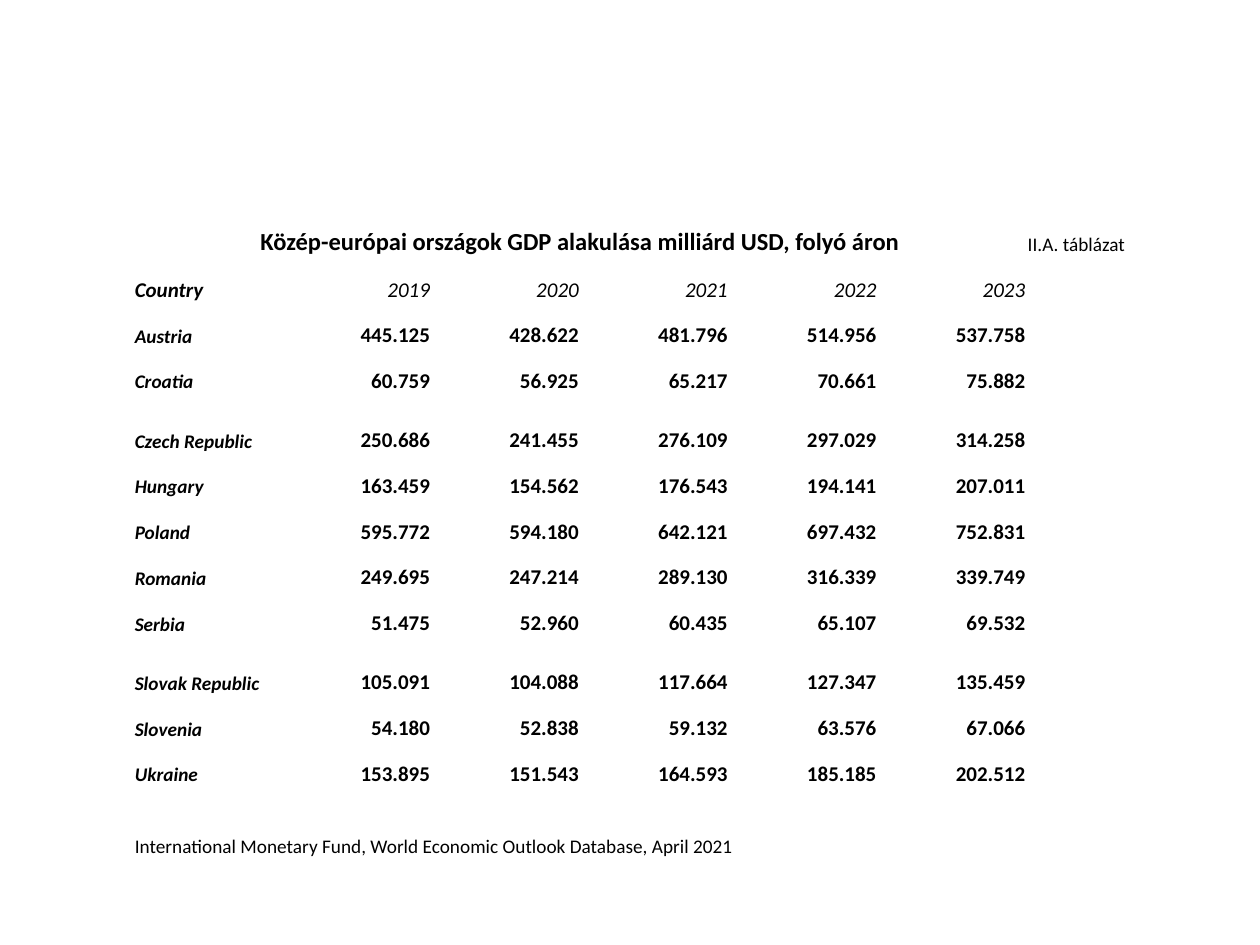
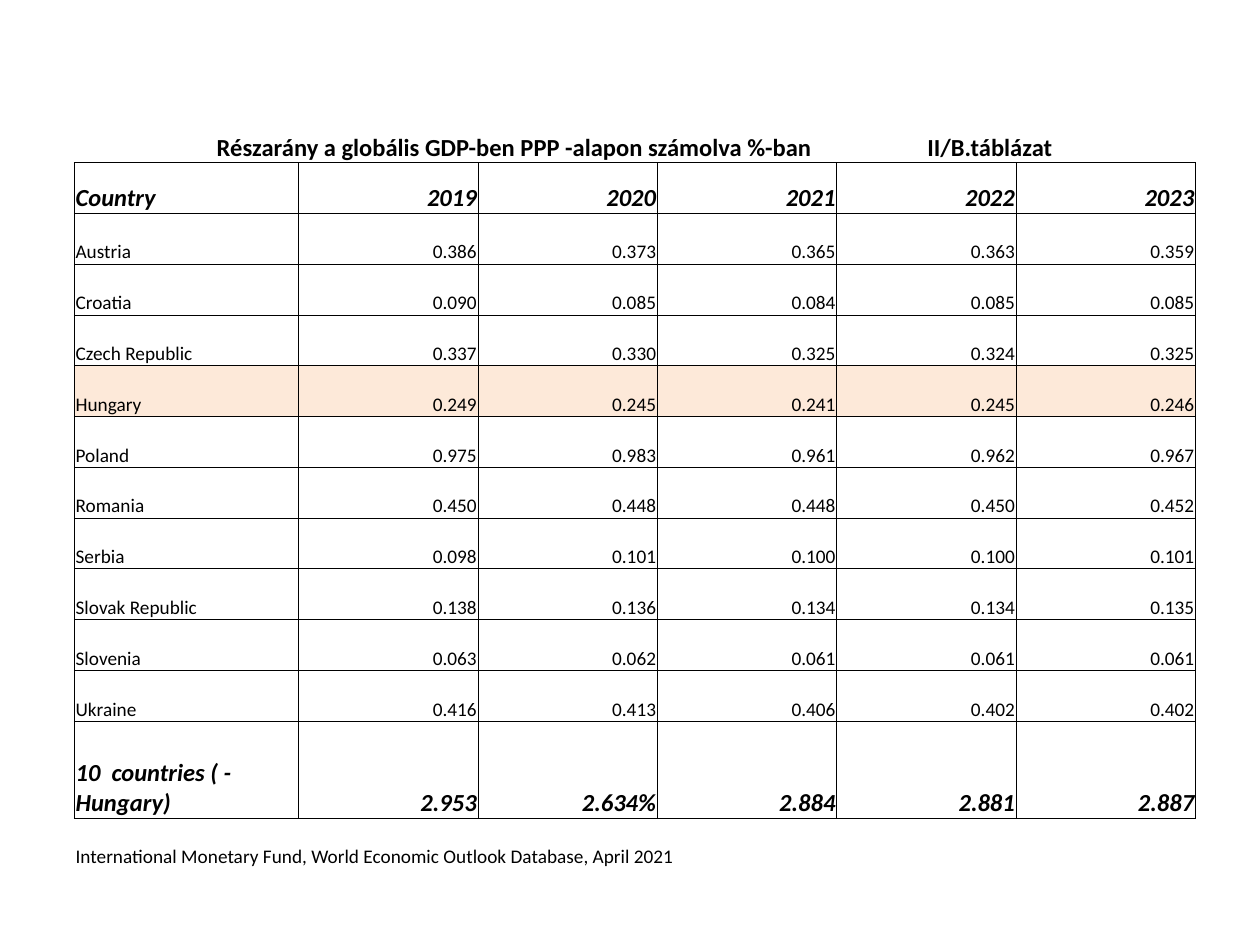
from dataclasses import dataclass

import lxml.etree
import pptx
import pptx.dml.color
import pptx.enum.text
import pptx.oxml.ns
import pptx.slide
import pptx.table
import pptx.util

Inches = pptx.util.Inches
Pt = pptx.util.Pt
qn = pptx.oxml.ns.qn
ALIGN = pptx.enum.text.PP_ALIGN

# Shared look
COLORS = {"text": "000000", "border": "000000", "highlight": "FDE9D9"}
FONT = "Calibri"
PLAIN_STYLE = "{2D5ABB26-0587-4C30-8999-92F81FD0307C}"
CELL_FORMAT = {
    "margin_left": Inches(0.01),
    "margin_right": Inches(0.01),
    "margin_top": Inches(0.01),
    "margin_bottom": Inches(0),
    "vertical_anchor": pptx.enum.text.MSO_ANCHOR.BOTTOM,
}


def text_format(size: int, bold: bool = False, italic: bool = False) -> dict:
    return {"name": FONT, "size": Pt(size), "bold": bold, "italic": italic}


TITLE = text_format(14, bold=True)
NOTE = text_format(11)
STRONG = text_format(14, bold=True, italic=True)

# Shared wording
YEARS = ["2019", "2020", "2021", "2022", "2023"]
COUNTRIES = ["Austria", "Croatia", "Czech Republic", "Hungary", "Poland",
             "Romania", "Serbia", "Slovak Republic", "Slovenia", "Ukraine"]
SOURCE = "International Monetary Fund, World Economic Outlook Database, April 2021"

GDP_VALUES = """
445.125 428.622 481.796 514.956 537.758
60.759 56.925 65.217 70.661 75.882
250.686 241.455 276.109 297.029 314.258
163.459 154.562 176.543 194.141 207.011
595.772 594.180 642.121 697.432 752.831
249.695 247.214 289.130 316.339 339.749
51.475 52.960 60.435 65.107 69.532
105.091 104.088 117.664 127.347 135.459
54.180 52.838 59.132 63.576 67.066
153.895 151.543 164.593 185.185 202.512
"""
SHARE_VALUES = """
0.386 0.373 0.365 0.363 0.359
0.090 0.085 0.084 0.085 0.085
0.337 0.330 0.325 0.324 0.325
0.249 0.245 0.241 0.245 0.246
0.975 0.983 0.961 0.962 0.967
0.450 0.448 0.448 0.450 0.452
0.098 0.101 0.100 0.100 0.101
0.138 0.136 0.134 0.134 0.135
0.063 0.062 0.061 0.061 0.061
0.416 0.413 0.406 0.402 0.402
"""
SHARE_TOTAL = ["10  countries ( -Hungary)", "2.953", "2.634%", "2.884", "2.881", "2.887"]


@dataclass(frozen=True)
class RowStyle:
    label: dict
    value: dict


@dataclass(frozen=True)
class TableRow:
    texts: list[str]
    style: RowStyle
    fill: str | None = None


@dataclass(frozen=True)
class TableSpec:
    left: float
    top: float
    width: float
    height: float
    columns: int
    fixed_columns: dict[int, float]
    fixed_rows: dict[int, float]
    rows: list[TableRow]
    source_span: int
    bordered: bool


def country_rows(values: str, style: RowStyle, highlighted: str = "") -> list[TableRow]:
    lines = values.strip().splitlines()
    return [TableRow([country, *line.split()], style,
                     COLORS["highlight"] if country == highlighted else None)
            for country, line in zip(COUNTRIES, lines)]


def shared_lengths(total: float, count: int, fixed: dict[int, float]) -> list[float]:
    """Give the length left over by the fixed entries in equal parts to the rest."""
    rest = (total - sum(fixed.values())) / (count - len(fixed))
    return [fixed.get(index, rest) for index in range(count)]


def apply_format(target: object, values: dict) -> None:
    for name, value in values.items():
        setattr(target, name, value)


def write_cell(cell: pptx.table._Cell, text: str, values: dict, alignment: ALIGN) -> None:
    paragraph = cell.text_frame.paragraphs[0]
    paragraph.alignment = alignment
    if not text:
        # An empty cell must not stretch its row
        end = lxml.etree.SubElement(paragraph._p, qn("a:endParaRPr"))
        end.set("sz", str(int(NOTE["size"].pt * 100)))
        return
    run = paragraph.add_run()
    run.text = text
    apply_format(run.font, values)
    run.font.color.rgb = pptx.dml.color.RGBColor.from_string(COLORS["text"])


def add_borders(cell: pptx.table._Cell, sides: str) -> None:
    properties = cell._tc.get_or_add_tcPr()
    for side in sides:
        line = lxml.etree.SubElement(properties, qn(f"a:ln{side}"), w=str(Pt(0.5)))
        fill = lxml.etree.SubElement(line, qn("a:solidFill"))
        lxml.etree.SubElement(fill, qn("a:srgbClr"), val=COLORS["border"])


def add_data_table(slide: pptx.slide.Slide, spec: TableSpec) -> pptx.table.Table:
    row_count = len(spec.rows)
    frame = slide.shapes.add_table(
        row_count, spec.columns, Inches(spec.left), Inches(spec.top),
        Inches(spec.width), Inches(spec.height))
    table = frame.table
    apply_format(table, {"first_row": False, "horz_banding": False})
    table._tbl.tblPr.find(qn("a:tableStyleId")).text = PLAIN_STYLE

    # Grid
    for column, width in zip(table.columns,
                             shared_lengths(spec.width, spec.columns, spec.fixed_columns)):
        column.width = Inches(width)
    for row, height in zip(table.rows,
                           shared_lengths(spec.height, row_count, spec.fixed_rows)):
        row.height = Inches(height)

    # Cells
    edge_sides = {0: "B", row_count - 1: "T"}
    for row_index, row in enumerate(spec.rows):
        for column_index in range(spec.columns):
            cell = table.cell(row_index, column_index)
            apply_format(cell, CELL_FORMAT)
            if spec.bordered:
                add_borders(cell, edge_sides.get(row_index, "LRTB"))
            if row.fill:
                cell.fill.solid()
                cell.fill.fore_color.rgb = pptx.dml.color.RGBColor.from_string(row.fill)
            else:
                cell.fill.background()
            text = row.texts[column_index] if column_index < len(row.texts) else ""
            is_label = column_index == 0
            is_number = not is_label and 0 < row_index < row_count - 1
            write_cell(cell, text, row.style.label if is_label else row.style.value,
                       ALIGN.RIGHT if is_number else ALIGN.LEFT)

    # Title and source run across the columns
    table.cell(0, 0).merge(table.cell(0, 5))
    table.cell(row_count - 1, 0).merge(table.cell(row_count - 1, spec.source_span - 1))
    return table


def build_gdp_slide(slide: pptx.slide.Slide) -> None:
    title = "Közép-európai országok GDP alakulása milliárd USD, folyó áron"
    note_style = RowStyle(TITLE, NOTE)
    header_style = RowStyle(text_format(12, bold=True, italic=True),
                            text_format(12, italic=True))
    body_style = RowStyle(text_format(11, bold=True, italic=True),
                          text_format(12, bold=True))
    rows = [
        TableRow([title, "", "", "", "", "", "II.A. táblázat"], note_style),
        TableRow(["Country", *YEARS], header_style),
        *country_rows(GDP_VALUES, body_style),
        TableRow([], body_style),
        TableRow([SOURCE], RowStyle(NOTE, NOTE)),
    ]
    table = add_data_table(slide, TableSpec(
        1.06, 1.31, 8.27, 5.51, columns=7, fixed_columns={},
        fixed_rows={0: 0.73, 4: 0.47, 9: 0.47, 13: 0.21},
        rows=rows, source_span=6, bordered=False))
    table.cell(0, 0).text_frame.paragraphs[0].alignment = ALIGN.CENTER


def build_share_slide(slide: pptx.slide.Slide) -> None:
    title = "Részarány a globális GDP-ben PPP -alapon számolva %-ban\tII/B.táblázat"
    strong_style = RowStyle(STRONG, STRONG)
    note_style = RowStyle(NOTE, NOTE)
    rows = [
        TableRow([title], RowStyle(TITLE, TITLE)),
        TableRow(["Country", *YEARS], strong_style),
        *country_rows(SHARE_VALUES, note_style, highlighted="Hungary"),
        TableRow(SHARE_TOTAL, strong_style),
        TableRow([SOURCE], note_style),
    ]
    table = add_data_table(slide, TableSpec(
        0.59, 0.68, 8.9, 6.22, columns=6, fixed_columns={0: 1.78},
        fixed_rows={0: 0.61, 12: 0.77},
        rows=rows, source_span=5, bordered=True))

    # A tab stop sets the table number apart from the title
    title_cell = table.cell(0, 0)
    title_cell.margin_left = Inches(1.13)
    properties = title_cell.text_frame.paragraphs[0]._p.get_or_add_pPr()
    tabs = lxml.etree.SubElement(properties, qn("a:tabLst"))
    lxml.etree.SubElement(tabs, qn("a:tab"), pos=str(Inches(5.64)), algn="l")


def main() -> None:
    presentation = pptx.Presentation()
    presentation.slide_width = Inches(10)
    presentation.slide_height = Inches(7.5)
    blank_layout = presentation.slide_layouts[6]
    for build_slide in (build_gdp_slide, build_share_slide):
        build_slide(presentation.slides.add_slide(blank_layout))
    presentation.save("out.pptx")


if __name__ == "__main__":
    main()
